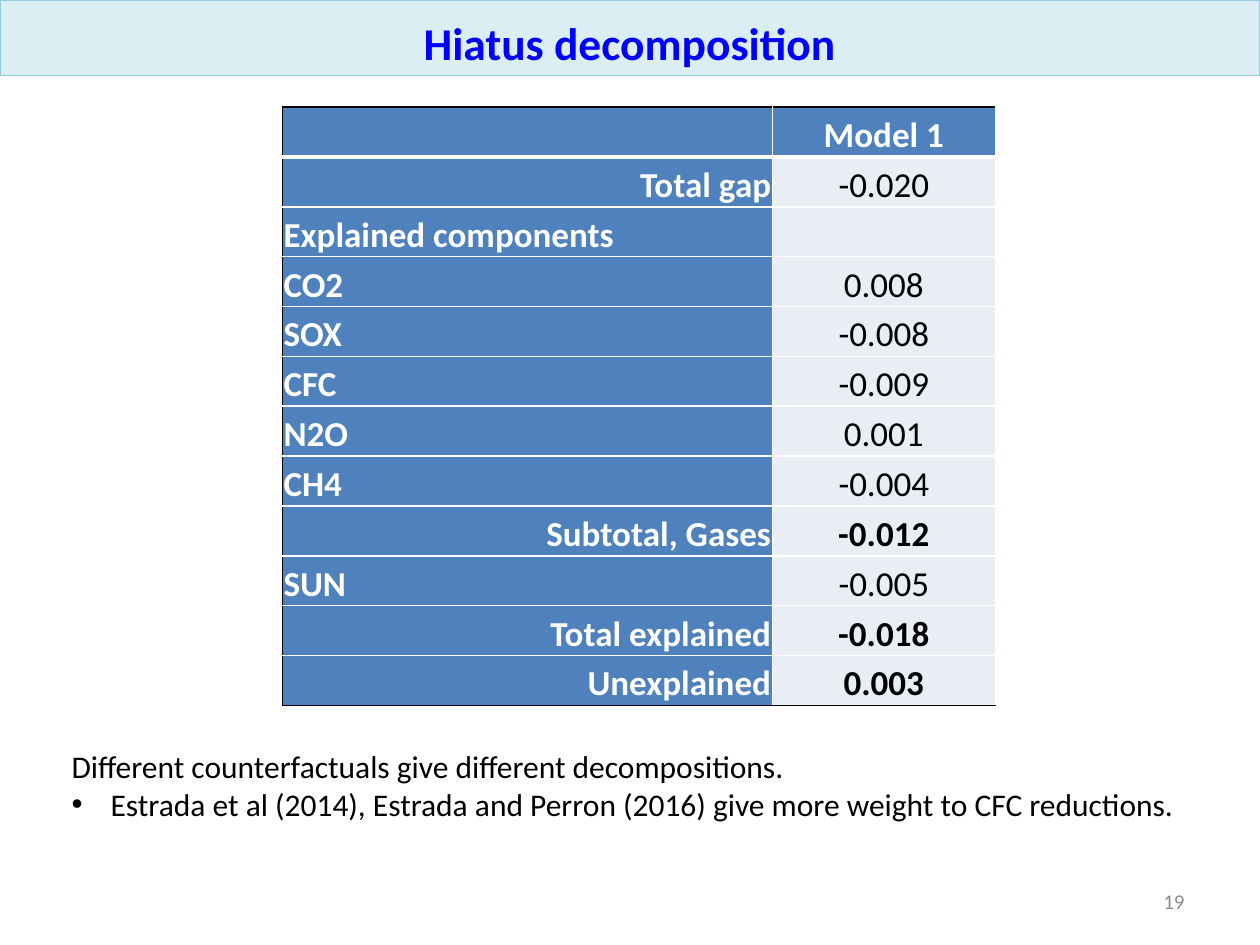
from lxml import etree
from pptx import Presentation
from pptx.dml.color import RGBColor
from pptx.enum.shapes import MSO_SHAPE
from pptx.enum.text import MSO_ANCHOR, PP_ALIGN
from pptx.oxml.ns import qn
from pptx.util import Inches, Pt

LEFT, CENTER, RIGHT = PP_ALIGN.LEFT, PP_ALIGN.CENTER, PP_ALIGN.RIGHT
BOTTOM, MIDDLE = MSO_ANCHOR.BOTTOM, MSO_ANCHOR.MIDDLE
RECTANGLE = MSO_SHAPE.RECTANGLE
BLACK, WHITE, BLUE, PALE = "000000", "FFFFFF", "4F81BD", "E9EDF4"

ROWS = [
    ("", "Model 1", LEFT, True),
    ("Total gap", "-0.020", RIGHT, False),
    ("Explained components", "", LEFT, False),
    ("CO2", "0.008", LEFT, False),
    ("SOX", "-0.008", LEFT, False),
    ("CFC", "-0.009", LEFT, False),
    ("N2O", "0.001", LEFT, False),
    ("CH4", "-0.004", LEFT, False),
    ("Subtotal, Gases", "-0.012", RIGHT, True),
    ("SUN", "-0.005", LEFT, False),
    ("Total explained", "-0.018", RIGHT, True),
    ("Unexplained", "0.003", RIGHT, True),
]
REMARKS = [
    "Different counterfactuals give different decompositions.",
    "Estrada et al (2014), Estrada and Perron (2016) give more weight to CFC reductions.",
]


def rgb(color):
    """Turn a hex string into a colour."""
    return RGBColor.from_string(color)


def write(paragraph, text, size, color, align=LEFT, bold=False):
    """Set the text of a paragraph and format its runs."""
    paragraph.text = text
    paragraph.alignment = align
    for run in paragraph.runs:
        run.font.name = "Calibri"
        run.font.size = Pt(size)
        run.font.bold = bold
        run.font.color.rgb = rgb(color)


def add_border(cell, side, color, width):
    """Draw one side of a cell."""
    properties = cell._tc.get_or_add_tcPr()
    line = etree.SubElement(properties, qn(f"a:ln{side}"), w=str(Pt(width)))
    fill = etree.SubElement(line, qn("a:solidFill"))
    etree.SubElement(fill, qn("a:srgbClr"), val=color)


def add_title(slide, title, left, top, width, height):
    """Place the title band."""
    band = slide.shapes.add_shape(RECTANGLE, left, top, width, height)
    band.shadow.inherit = False
    band.fill.solid()
    band.fill.fore_color.rgb = rgb("DBEEF4")
    band.line.color.rgb = rgb("93CDDD")
    band.line.width = Pt(0)
    band.text_frame.vertical_anchor = BOTTOM
    write(band.text_frame.paragraphs[0], title, 26, "0000FF", CENTER, True)


def fill_cell(cell, text, align, bold, color, background, borders):
    """Format one table cell and write its text."""
    cell.margin_left = cell.margin_right = cell.margin_top = Inches(0.01)
    cell.margin_bottom = 0
    cell.vertical_anchor = BOTTOM
    for side, (line_color, line_width) in borders.items():
        add_border(cell, side, line_color, line_width)
    cell.fill.solid()
    cell.fill.fore_color.rgb = rgb(background)
    write(cell.text_frame.paragraphs[0], text, 20, color, align, bold)


def add_decomposition(slide, left, top, width, height):
    """Place the table of gap components."""
    table = slide.shapes.add_table(len(ROWS), 2, left, top, width, height).table
    label_width = Inches(3.89)
    table.columns[0].width = label_width
    table.columns[1].width = width - label_width
    last = len(ROWS) - 1
    for index, (label, value, align, bold) in enumerate(ROWS):
        table.rows[index].height = height // len(ROWS)
        header = index == 0
        above = (BLACK, 1) if header else (WHITE, 3 if index == 1 else 1)
        below = (BLACK, 1) if index == last else (WHITE, 3 if header else 1)
        borders = {"L": (WHITE, 1), "R": (WHITE, 1), "T": above, "B": below}
        fill_cell(table.cell(index, 0), label, align, True, WHITE, BLUE,
                  {**borders, "L": (BLACK, 1)})
        fill_cell(table.cell(index, 1), value, CENTER, bold,
                  WHITE if header else BLACK, BLUE if header else PALE, borders)


def add_remarks(slide, left, top, width, height):
    """Place the closing statement and its bullet."""
    frame = slide.shapes.add_textbox(left, top, width, height).text_frame
    frame.word_wrap = True
    statement, bullet = frame.paragraphs[0], frame.add_paragraph()
    for paragraph, text in zip((statement, bullet), REMARKS):
        write(paragraph, text, 18, BLACK)
    properties = bullet._p.get_or_add_pPr()
    properties.set("marL", str(Inches(0.31)))
    properties.set("indent", str(-Inches(0.31)))
    etree.SubElement(properties, qn("a:buFont"), typeface="Arial")
    etree.SubElement(properties, qn("a:buChar"), char="•")


def add_page_number(slide, number, left, top, width, height):
    """Place the page number."""
    frame = slide.shapes.add_textbox(left, top, width, height).text_frame
    frame.word_wrap = True
    frame.vertical_anchor = MIDDLE
    write(frame.paragraphs[0], number, 12, "8C8C8C", RIGHT)


def main():
    """Build and save the slide."""
    deck = Presentation()
    deck.slide_width, deck.slide_height = Inches(10), Inches(7.5)
    slide = deck.slides.add_slide(deck.slide_layouts[6])
    add_title(slide, "Hiatus decomposition", 0, 0, deck.slide_width, Inches(0.6))
    add_page_number(slide, "19", Inches(8.92), Inches(6.95), Inches(0.58), Inches(0.4))
    add_decomposition(slide, Inches(2.24), Inches(0.85), Inches(5.66), Inches(4.75))
    add_remarks(slide, Inches(0.47), Inches(5.88), Inches(9.2), Inches(0.71))
    deck.save("out.pptx")


if __name__ == "__main__":
    main()
